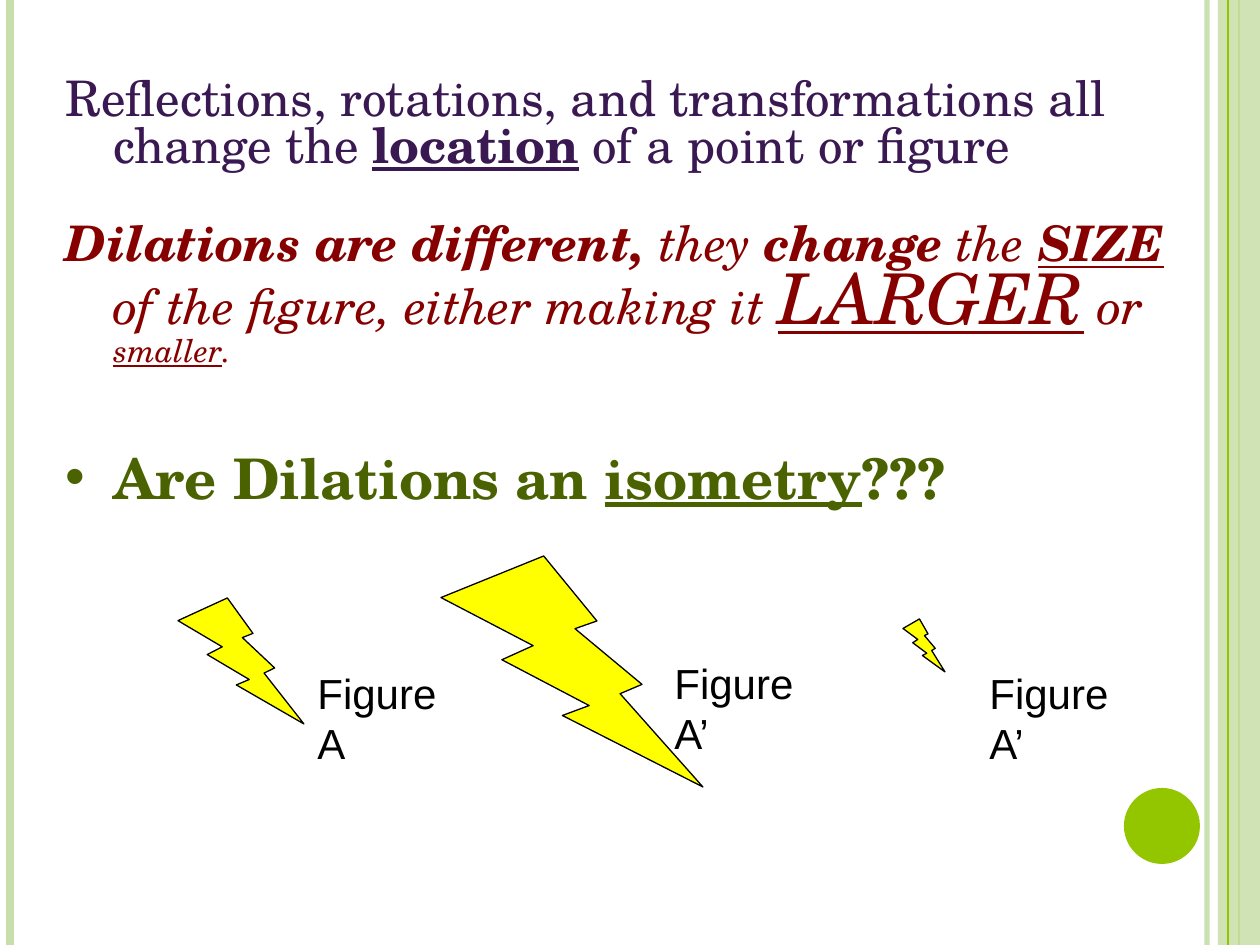
from lxml import etree
from pptx import Presentation
from pptx import util as u
from pptx.dml.color import RGBColor
from pptx.enum import shapes, text
from pptx.oxml.ns import qn

PX = u.Inches(1) / 126
SERIF = "TeX Gyre Schola"
PURPLE, RED, OLIVE = "3A1953", "860000", "4A6300"
PALE, GREEN, YELLOW, BLACK = "C8DFAB", "94C600", "FFFF00", "000000"


def rgb(value):
    return RGBColor.from_string(value)


def add_span(para, words, size=28, color=BLACK, font=SERIF, bold=False, italic=False, underline=False):
    span = para.add_run()
    span.text = words
    span.font.name = font
    span.font.size = u.Pt(size)
    span.font.color.rgb = rgb(color)
    span.font.bold = bold
    span.font.italic = italic
    span.font.underline = underline


deck = Presentation()
deck.slide_width, deck.slide_height = u.Inches(10), u.Inches(7.5)
page = deck.slides.add_slide(deck.slide_layouts[6])

bars = [
    ("line", 1207, PALE, 3, 93),
    ("line", 10, PALE, 4.5, 100),
    ("line", 1239, GREEN, 1.5, 100),
    ("band", 1218, PALE, 42, 87),
    ("line", 1228, GREEN, 0.75, 100),
]
for kind, x, color, width, opacity in bars:
    if kind == "line":
        bar = page.shapes.add_connector(
            shapes.MSO_CONNECTOR.STRAIGHT, int(x * PX), 0, int(x * PX), int(945 * PX))
        bar.line.width = u.Pt(width)
        paint = bar.line.fill
        etree.SubElement(bar._element.spPr, qn("a:effectLst"))
    else:
        bar = page.shapes.add_shape(
            shapes.MSO_SHAPE.RECTANGLE, int(x * PX), 0, int(width * PX), int(945 * PX))
        bar.shadow.inherit = False
        bar.line.fill.background()
        paint = bar.fill
    paint.solid()
    paint.fore_color.rgb = rgb(color)
    if opacity < 100:
        for tint in bar._element.spPr.iter(qn("a:srgbClr")):
            etree.SubElement(tint, qn("a:alpha"), val=str(opacity * 1000))

figures = [
    (shapes.MSO_SHAPE.OVAL, 1124, 788, 76, 76, GREEN),
    (shapes.MSO_SHAPE.LIGHTNING_BOLT, 441, 556, 262, 231, YELLOW),
    (shapes.MSO_SHAPE.LIGHTNING_BOLT, 178, 598, 126, 126, YELLOW),
    (shapes.MSO_SHAPE.LIGHTNING_BOLT, 903, 619, 42, 53, YELLOW),
]
for preset, *place, color in figures:
    figure = page.shapes.add_shape(preset, *[int(n * PX) for n in place])
    figure.shadow.inherit = False
    figure.fill.solid()
    figure.fill.fore_color.rgb = rgb(color)
    if color == YELLOW:
        figure.line.color.rgb = rgb(BLACK)
        figure.line.width = u.Pt(0.75)
    else:
        figure.line.fill.background()

rule = {"color": PURPLE}
change = {"color": RED, "italic": True}
question = {"color": OLIVE, "size": 32, "bold": True}
paragraphs = [
    (6, "", [
        ("Reflections, rotations, and transformations all change the ", rule),
        ("location", {**rule, "bold": True, "underline": True}),
        (" of a point or figure", rule),
    ]),
    (29, "", [
        ("Dilations are different, ", {**change, "bold": True}),
        ("they ", change),
        ("change", {**change, "bold": True}),
        (" the ", change),
        ("SIZE", {**change, "bold": True, "underline": True}),
        (" of the figure, either making it ", change),
        ("LARGER", {**change, "size": 40, "underline": True}),
        (" or ", change),
        ("smaller", {**change, "size": 18, "underline": True}),
        (".", {**change, "size": 18}),
    ]),
    (50, "•", [
        ("Are Dilations an ", question),
        ("isometry", {**question, "underline": True}),
        ("???", question),
    ]),
]
box = page.shapes.add_textbox(*[int(n * PX) for n in (53, 73, 1155, 420)])
box.text_frame.word_wrap = True
for index, (gap, bullet, spans) in enumerate(paragraphs):
    para = box.text_frame.add_paragraph() if index else box.text_frame.paragraphs[0]
    para.line_spacing = 0.8
    para.space_before = u.Pt(gap)
    layout = para._p.get_or_add_pPr()
    layout.set("marL", str(int(48 * PX)))
    layout.set("indent", str(int(-48 * PX)))
    if bullet:
        etree.SubElement(layout, qn("a:buFont"), typeface="Arial")
        etree.SubElement(layout, qn("a:buChar"), char=bullet)
    else:
        etree.SubElement(layout, qn("a:buNone"))
    for words, style in spans:
        add_span(para, words, **style)

labels = [
    ("Figure A", 305, 661, 147),
    ("Figure A’", 662, 651, 157),
    ("Figure A’", 977, 661, 168),
]
for words, x, y, width in labels:
    label = page.shapes.add_textbox(*[int(n * PX) for n in (x, y, width, 113)])
    label.text_frame.word_wrap = True
    label.text_frame.auto_size = text.MSO_AUTO_SIZE.SHAPE_TO_FIT_TEXT
    add_span(label.text_frame.paragraphs[0], words, size=24, font="Arial")

deck.save("out.pptx")
